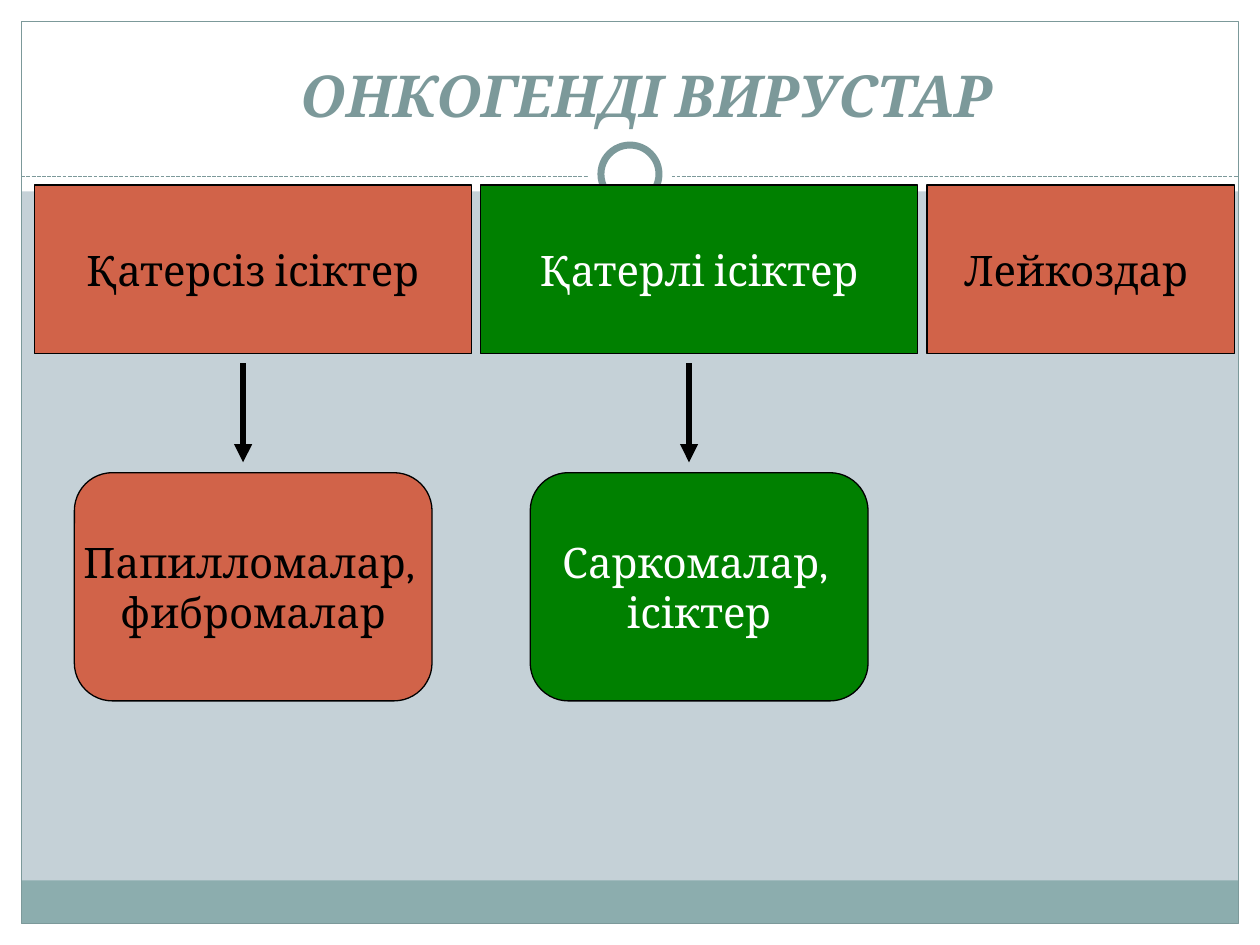
from dataclasses import dataclass
from typing import Optional

from lxml.etree import SubElement
from pptx import Presentation
from pptx.dml.color import RGBColor
from pptx.enum.dml import MSO_LINE_DASH_STYLE as Dash
from pptx.enum.shapes import MSO_CONNECTOR as Connector, MSO_SHAPE as Shape
from pptx.enum.text import MSO_ANCHOR as Anchor, PP_ALIGN as Align
from pptx.oxml.ns import qn
from pptx.util import Cm, Pt

WHITE = RGBColor(0xFF, 0xFF, 0xFF)
BLACK = RGBColor(0x00, 0x00, 0x00)
MIST = RGBColor(0xC5, 0xD1, 0xD7)
TEAL = RGBColor(0x8C, 0xAD, 0xAE)
SLATE = RGBColor(0x7C, 0x99, 0x9A)
RUST = RGBColor(0xD1, 0x63, 0x49)
GREEN = RGBColor(0x00, 0x80, 0x00)

WIDTH, HEIGHT = 25.4, 19.05
EDGE = 0.43
INNER = WIDTH - 2 * EDGE
RING_X, RING_Y = WIDTH / 2, 3.51
GROUP_LEFT, GROUP_TOP, GROUP_HEIGHT, GROUP_GAP = 0.69, 3.73, 3.4, 0.19
EXAMPLE_TOP, EXAMPLE_HEIGHT = 9.53, 4.6
ARROW_TOP, ARROW_BOTTOM = 7.32, 9.32


@dataclass
class Panel:
    left: float
    top: float
    width: float
    height: float
    fill: Optional[RGBColor] = WHITE
    line: Optional[RGBColor] = None
    weight: float = 0.75
    kind: Shape = Shape.RECTANGLE


@dataclass
class Example:
    left: float
    width: float
    lines: list[str]
    arrow_x: float


@dataclass
class Group:
    name: str
    width: float
    fill: RGBColor
    ink: RGBColor
    example: Optional[Example] = None


GROUPS = [
    Group("Қатерсіз ісіктер", 8.81, RUST, BLACK,
          Example(1.5, 7.21, ["Папилломалар, ", "фибромалар"], 4.9)),
    Group("Қатерлі ісіктер", 8.81, GREEN, WHITE,
          Example(10.69, 6.81, ["Саркомалар, ", "ісіктер"], 13.89)),
    Group("Лейкоздар ", 6.2, RUST, BLACK),
]


def ring_disc(size: float, line: Optional[RGBColor] = None) -> Panel:
    return Panel(RING_X - size / 2, RING_Y - size / 2, size, size,
                 line=line, weight=4, kind=Shape.OVAL)


def draw_panel(page, panel: Panel):
    box = page.shapes.add_shape(panel.kind, Cm(panel.left), Cm(panel.top),
                                Cm(panel.width), Cm(panel.height))
    box.shadow.inherit = False
    for target, color in ((box.fill, panel.fill), (box.line.fill, panel.line)):
        if color is None:
            target.background()
        else:
            target.solid()
            target.fore_color.rgb = color
    if panel.line is not None:
        box.line.width = Pt(panel.weight)
    return box


def write(box, lines: list[str], ink: RGBColor, anchor: Anchor, wrap: bool, **font) -> None:
    frame = box.text_frame
    frame.word_wrap = wrap
    frame.vertical_anchor = anchor
    for index, line in enumerate(lines):
        para = frame.add_paragraph() if index else frame.paragraphs[0]
        para.alignment = Align.CENTER
        span = para.add_run()
        span.text = line
        span.font.color.rgb = ink
        for key, value in {"name": "Cambria", "size": Pt(24), **font}.items():
            setattr(span.font, key, value)


def draw_line(page, start: tuple[float, float], end: tuple[float, float],
              color: RGBColor, weight: float):
    line = page.shapes.add_connector(Connector.STRAIGHT, *map(Cm, start + end))
    line.line.color.rgb = color
    line.line.width = Pt(weight)
    SubElement(line._element.spPr, qn("a:effectLst"))
    return line


def draw_arrow(page, x: float) -> None:
    arrow = draw_line(page, (x, ARROW_TOP), (x, ARROW_BOTTOM), BLACK, 3.5)
    SubElement(arrow.line._get_or_add_ln(), qn("a:tailEnd"), type="triangle")


def draw_backdrop(page) -> None:
    page.background.fill.solid()
    page.background.fill.fore_color.rgb = MIST
    for panel in (
        Panel(0, HEIGHT - EDGE, WIDTH, EDGE),
        Panel(0, 0, WIDTH, 3.86),
        Panel(0, 0, EDGE, HEIGHT),
        Panel(WIDTH - EDGE, 0, EDGE, HEIGHT),
        Panel(EDGE, 17.75, INNER, 0.86, TEAL),
        Panel(EDGE, EDGE, INNER, HEIGHT - 2 * EDGE, None, SLATE),
    ):
        draw_panel(page, panel)
    divider = draw_line(page, (EDGE, 3.56), (WIDTH - EDGE, 3.56), SLATE, 0.75)
    divider.line.dash_style = Dash.SQUARE_DOT
    # The plain disc opens a gap in the divider around the ring
    draw_panel(page, ring_disc(1.7))
    draw_panel(page, ring_disc(1.17, SLATE))


def draw_groups(page) -> None:
    left = GROUP_LEFT
    for group in GROUPS:
        box = draw_panel(page, Panel(left, GROUP_TOP, group.width, GROUP_HEIGHT,
                                     group.fill, BLACK))
        write(box, [group.name], group.ink, Anchor.MIDDLE, False)
        left += group.width + GROUP_GAP
        example = group.example
        if example:
            box = draw_panel(page, Panel(example.left, EXAMPLE_TOP, example.width,
                                         EXAMPLE_HEIGHT, group.fill, BLACK,
                                         kind=Shape.FLOWCHART_ALTERNATE_PROCESS))
            write(box, example.lines, group.ink, Anchor.MIDDLE, False)
            draw_arrow(page, example.arrow_x)


def main() -> None:
    deck = Presentation()
    deck.slide_width, deck.slide_height = Cm(WIDTH), Cm(HEIGHT)
    page = deck.slides.add_slide(deck.slide_layouts[6])
    draw_backdrop(page)

    # Title
    title = page.shapes.add_textbox(Cm(1.27), Cm(0.76), Cm(23.55), Cm(1.96))
    write(title, ["ОНКОГЕНДІ ВИРУСТАР"], SLATE, Anchor.BOTTOM, True,
          size=Pt(33), bold=True, italic=True)

    # Tumour groups with their examples
    draw_groups(page)
    deck.save("out.pptx")


if __name__ == "__main__":
    main()
